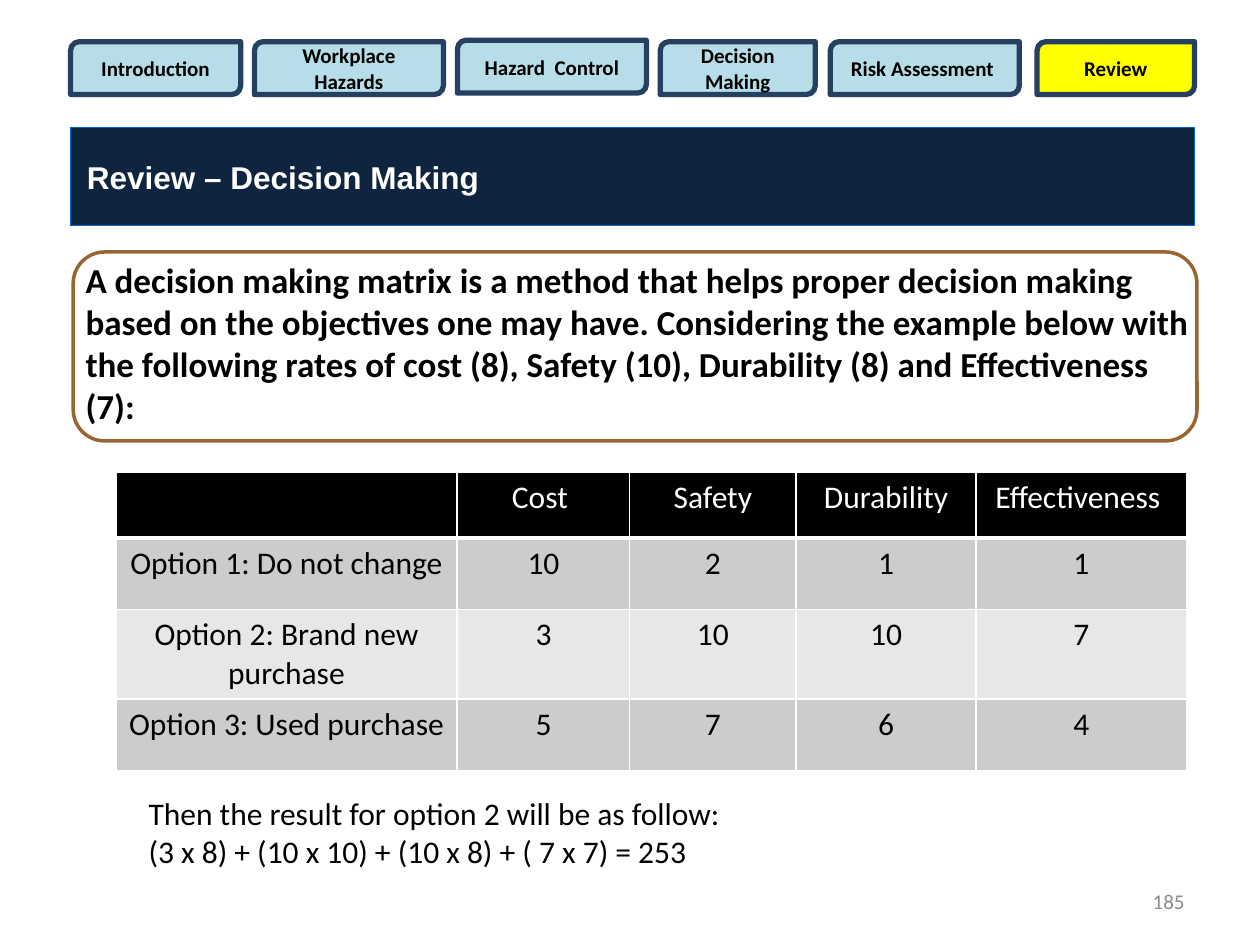
import pptx
import pptx.util
import pptx.dml.color
import pptx.enum.shapes
import pptx.enum.text
import pptx.oxml
import lxml.etree

Pt = pptx.util.Pt
RGB = pptx.dml.color.RGBColor
KIND = pptx.enum.shapes.MSO_SHAPE
ALIGN = pptx.enum.text.PP_ALIGN
ANCHOR = pptx.enum.text.MSO_ANCHOR
AUTO = pptx.enum.text.MSO_AUTO_SIZE

BLACK = RGB(0x00, 0x00, 0x00)
WHITE = RGB(0xFF, 0xFF, 0xFF)
GRAY = RGB(0x8C, 0x8C, 0x8C)
NAVY = RGB(0x0F, 0x24, 0x3E)
EDGE = RGB(0x25, 0x40, 0x61)
BLUE = RGB(0x00, 0x65, 0xCC)
PALE = RGB(0xB7, 0xDE, 0xE8)
YELLOW = RGB(0xFF, 0xFF, 0x00)
BROWN = RGB(0x99, 0x65, 0x32)
DARK = RGB(0xCC, 0xCC, 0xCC)
LIGHT = RGB(0xE7, 0xE7, 0xE7)

# Text formats
BODY = {"name": "Calibri", "size": Pt(20), "bold": True}
PLAIN = {"name": "Calibri", "size": Pt(18), "bold": False}
SMALL = {"name": "Calibri", "size": Pt(12), "bold": False}
LABEL = {"name": "Calibri", "size": Pt(12), "bold": True}
HEAD = {"name": "Arial", "size": Pt(18), "bold": True}

# Tabs: label, left, top, width
TABS = [
    ("Introduction", 40.3, 23.8, 97.2),
    ("Workplace Hazards", 145.4, 23.8, 108),
    ("Hazard  Control", 261.4, 23, 108),
    ("Decision Making", 377.3, 23.8, 88.6),
    ("Risk Assessment ", 474.5, 23.8, 108),
    ("Review", 592.6, 23.8, 90),
]
ROWS = [
    ("", "Cost ", "Safety", "Durability", "Effectiveness "),
    ("Option 1: Do not change", "10", "2", "1", "1"),
    ("Option 2: Brand new purchase", "3", "10", "10", "7"),
    ("Option 3: Used purchase", "5", "7", "6", "4"),
]
WIDTHS = [195.1, 98.6, 95, 103, 120.3]
HEIGHTS = [37.4, 41, 51, 41]


def set_text(frame, lines, style, color=BLACK, align=ALIGN.LEFT):
    frame.word_wrap = True
    for i, line in enumerate(lines):
        para = frame.add_paragraph() if i else frame.paragraphs[0]
        para.alignment = align
        run = para.add_run()
        run.text = line
        for key, value in style.items():
            setattr(run.font, key, value)
        run.font.color.rgb = color


def add_text(slide, box, lines, style, color=BLACK, align=ALIGN.LEFT):
    frame = slide.shapes.add_textbox(*map(Pt, box)).text_frame
    set_text(frame, lines, style, color, align)
    return frame


def add_shape(slide, kind, box, fill, line, width):
    shape = slide.shapes.add_shape(kind, *map(Pt, box))
    shape.shadow.inherit = False
    if fill is None:
        shape.fill.background()
    else:
        shape.fill.solid()
        shape.fill.fore_color.rgb = fill
    shape.line.color.rgb = line
    shape.line.width = Pt(width)
    return shape


def add_tab(slide, label, left, top, width):
    fill = YELLOW if label == "Review" else PALE
    tab = add_shape(slide, KIND.ROUND_2_DIAG_RECTANGLE,
                    (left, top, width, 30.2), fill, EDGE, 3)
    tab.text_frame.vertical_anchor = ANCHOR.MIDDLE
    set_text(tab.text_frame, [label], LABEL, align=ALIGN.CENTER)


def add_title(slide):
    add_shape(slide, KIND.RECTANGLE, (40.3, 72.7, 642.2, 56.2), NAVY, BLUE, 0.5)
    title = slide.shapes.title
    place = {"left": 42.5, "top": 86.4, "width": 545, "height": 28.8}
    for key, value in place.items():
        setattr(title, key, Pt(value))
    frame = title.text_frame
    frame.auto_size = AUTO.NONE
    frame.vertical_anchor = ANCHOR.TOP
    set_text(frame, ["Review – Decision Making"], HEAD, WHITE)
    # Bring the title in front of its bar
    slide.shapes.element.append(title.element)


def set_edges(cell, base):
    props = cell._tc.get_or_add_tcPr()
    edges = {"lnL": 1, "lnR": 1, "lnT": 1, "lnB": base}
    for i, (tag, width) in enumerate(edges.items()):
        line = lxml.etree.Element(pptx.oxml.ns.qn("a:" + tag), w=str(Pt(width)))
        fill = lxml.etree.SubElement(line, pptx.oxml.ns.qn("a:solidFill"))
        lxml.etree.SubElement(fill, pptx.oxml.ns.qn("a:srgbClr"), val=str(WHITE))
        props.insert(i, line)


def add_table(slide):
    box = (66.2, 270, sum(WIDTHS), sum(HEIGHTS))
    table = slide.shapes.add_table(len(ROWS), len(WIDTHS), *map(Pt, box)).table
    for col, width in zip(table.columns, WIDTHS):
        col.width = Pt(width)
    for r, row in enumerate(ROWS):
        table.rows[r].height = Pt(HEIGHTS[r])
        shade = BLACK if r == 0 else (LIGHT, DARK)[r % 2]
        for c, text in enumerate(row):
            cell = table.cell(r, c)
            cell.fill.solid()
            cell.fill.fore_color.rgb = shade
            set_edges(cell, 1 if r else 3)
            if text:
                set_text(cell.text_frame, [text], PLAIN,
                         BLACK if r else WHITE, ALIGN.CENTER)


def main():
    deck = pptx.Presentation()
    deck.slide_width, deck.slide_height = Pt(720), Pt(540)
    slide = deck.slides.add_slide(deck.slide_layouts[5])

    # Statement and its frame
    body = add_text(slide, (41.8, 144, 648, 372), [
        "A decision making matrix is a method that helps proper decision "
        "making based on the objectives one may have. Considering the example "
        "below with the following rates of cost (8), Safety (10), "
        "Durability (8) and Effectiveness (7):"], BODY)
    body.paragraphs[0].space_before = Pt(4)
    add_shape(slide, KIND.ROUNDED_RECTANGLE, (41.8, 144, 642.2, 108),
              None, BROWN, 2)

    # Matrix and result
    add_table(slide)
    add_text(slide, (77.8, 450, 606.2, 51), [
        "Then the result for option 2 will be as follow:",
        "(3 x 8) + (10 x 10) + (10 x 8) + ( 7 x 7) = 253"], PLAIN)

    # Page number
    page = add_text(slide, (516, 500.4, 168, 28.8), ["185"], SMALL, GRAY,
                    ALIGN.RIGHT)
    page.vertical_anchor = ANCHOR.MIDDLE

    # Navigation tabs and title bar
    for tab in TABS:
        add_tab(slide, *tab)
    add_title(slide)
    deck.save("out.pptx")


if __name__ == "__main__":
    main()
